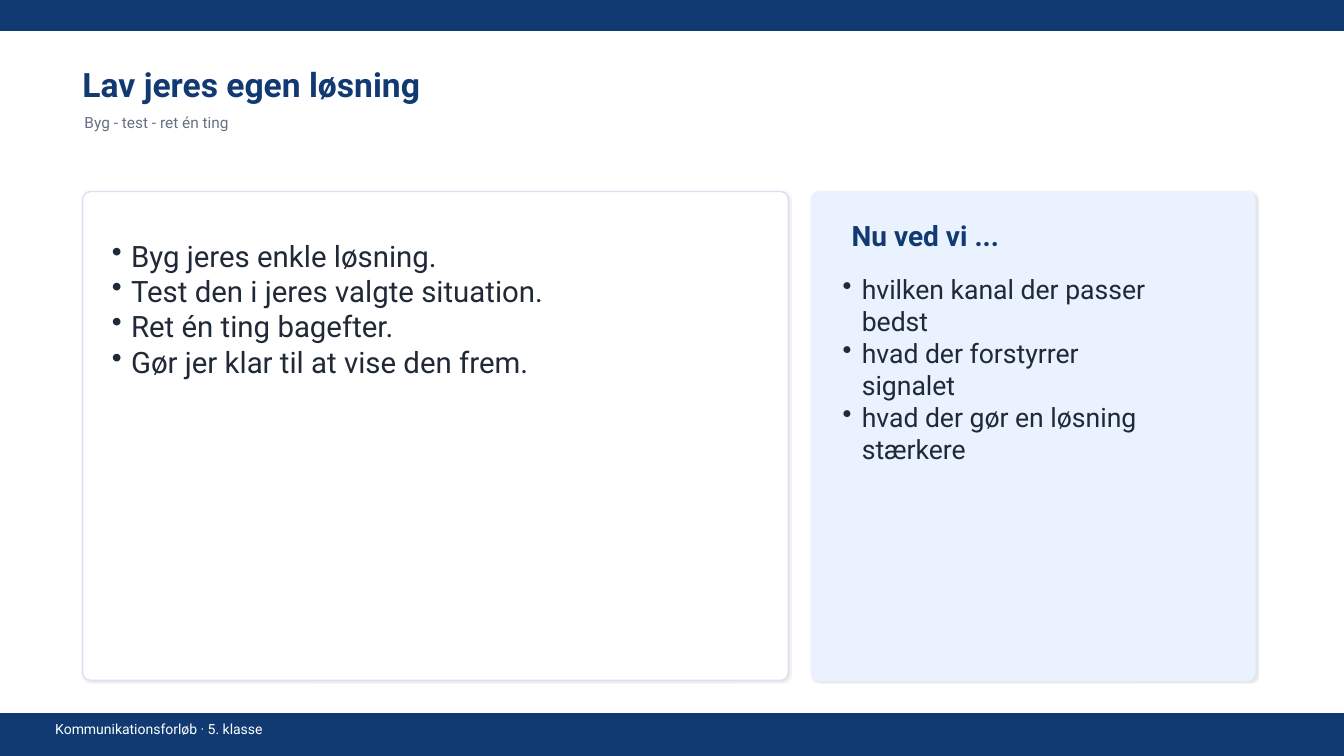
from dataclasses import dataclass

from lxml import etree
from pptx import Presentation
from pptx import util as u
from pptx.dml.color import RGBColor
from pptx.enum import shapes, text
from pptx.oxml import ns

COLS, ROWS = 133.33, 75
CELL = u.Inches(0.1)
FONT = "Roboto"
COLORS = {
    "navy": "123A72",
    "white": "FFFFFF",
    "grey": "667085",
    "ink": "1F2937",
    "border": "D8E2F0",
    "pale": "EAF2FF",
    "shadow": "000000",
}


@dataclass(frozen=True)
class Area:
    col: float
    row: float
    cols: float
    rows: float

    def emu(self) -> list[int]:
        return [round(n * CELL) for n in (self.col, self.row, self.cols, self.rows)]


@dataclass(frozen=True)
class Panel:
    area: Area
    fill: str
    line: str
    radius: float = 0


@dataclass(frozen=True)
class Label:
    area: Area
    words: str
    size: float
    color: str
    bold: bool = False


@dataclass(frozen=True)
class BulletList:
    area: Area
    items: tuple[str, ...]
    size: float


BARS = (
    Panel(Area(0, 0, COLS, 3), "navy", "navy"),
    Panel(Area(0, 70.8, COLS, 4.2), "navy", "navy"),
)
CARDS = (
    Panel(Area(8.2, 19, 70, 48.5), "white", "border", 0.016),
    Panel(Area(80.5, 19, 44, 48.5), "pale", "pale", 0.018),
)
LABELS = (
    Label(Area(4.5, 71.6, 80, 1.5), "Kommunikationsforløb · 5. klasse", 10, "white"),
    Label(Area(7.2, 6.2, 111, 4.2), "Lav jeres egen løsning", 24, "navy", True),
    Label(Area(7.4, 11, 108, 2.2), "Byg - test - ret én ting", 11, "grey"),
    Label(Area(83.5, 22, 20, 2.6), "Nu ved vi ...", 20, "navy", True),
)
LISTS = (
    BulletList(
        Area(10.5, 23, 62, 25),
        (
            "Byg jeres enkle løsning.",
            "Test den i jeres valgte situation.",
            "Ret én ting bagefter.",
            "Gør jer klar til at vise den frem.",
        ),
        21,
    ),
    BulletList(
        Area(83, 26.5, 34, 20),
        (
            "hvilken kanal der passer bedst",
            "hvad der forstyrrer signalet",
            "hvad der gør en løsning stærkere",
        ),
        19,
    ),
)


def rgb(name: str) -> RGBColor:
    return RGBColor.from_string(COLORS[name])


def add_shadow(sp) -> None:
    effects = sp._element.spPr.find(ns.qn("a:effectLst"))
    shadow = etree.SubElement(
        effects, ns.qn("a:outerShdw"), blurRad=str(u.Pt(1)), dist=str(u.Pt(1.2)),
        dir=str(45 * 60000), algn="tl", rotWithShape="0",
    )
    color = etree.SubElement(shadow, ns.qn("a:srgbClr"), val=COLORS["shadow"])
    etree.SubElement(color, ns.qn("a:alpha"), val="10000")


def add_panel(s, panel: Panel) -> None:
    preset = shapes.MSO_SHAPE
    kind = preset.ROUNDED_RECTANGLE if panel.radius else preset.RECTANGLE
    sp = s.shapes.add_shape(kind, *panel.area.emu())
    sp.shadow.inherit = False
    sp.fill.solid()
    sp.fill.fore_color.rgb = rgb(panel.fill)
    sp.line.color.rgb = rgb(panel.line)
    sp.line.width = u.Pt(1)
    if panel.radius:
        sp.adjustments[0] = panel.radius
        add_shadow(sp)


def add_text(s, area: Area, words: str, size: float, color: str, bold: bool = False):
    tf = s.shapes.add_textbox(*area.emu()).text_frame
    tf.word_wrap = True
    tf.text = words
    for p in tf.paragraphs:
        for r in p.runs:
            r.font.name = FONT
            r.font.size = u.Pt(size)
            r.font.bold = bold
            r.font.color.rgb = rgb(color)
    return tf


def add_label(s, label: Label) -> None:
    tf = add_text(s, label.area, label.words, label.size, label.color, label.bold)
    tf.vertical_anchor = text.MSO_ANCHOR.MIDDLE


def add_bullets(s, bullets: BulletList) -> None:
    tf = add_text(s, bullets.area, "\n".join(bullets.items), bullets.size, "ink")
    tf.margin_left = tf.margin_right = u.Inches(0.06)
    tf.margin_top = tf.margin_bottom = u.Inches(0.06)
    indent = u.Inches(0.19)
    for p in tf.paragraphs:
        props = p._p.get_or_add_pPr()
        props.set("marL", str(indent))
        props.set("indent", str(-indent))
        etree.SubElement(props, ns.qn("a:buChar"), char="•")


def main() -> None:
    prs = Presentation()
    prs.slide_width, prs.slide_height = round(COLS * CELL), ROWS * CELL
    s = prs.slides.add_slide(prs.slide_layouts[6])
    for panel in BARS + CARDS:
        add_panel(s, panel)
    for label in LABELS:
        add_label(s, label)
    for bullets in LISTS:
        add_bullets(s, bullets)
    prs.save("out.pptx")


if __name__ == "__main__":
    main()
